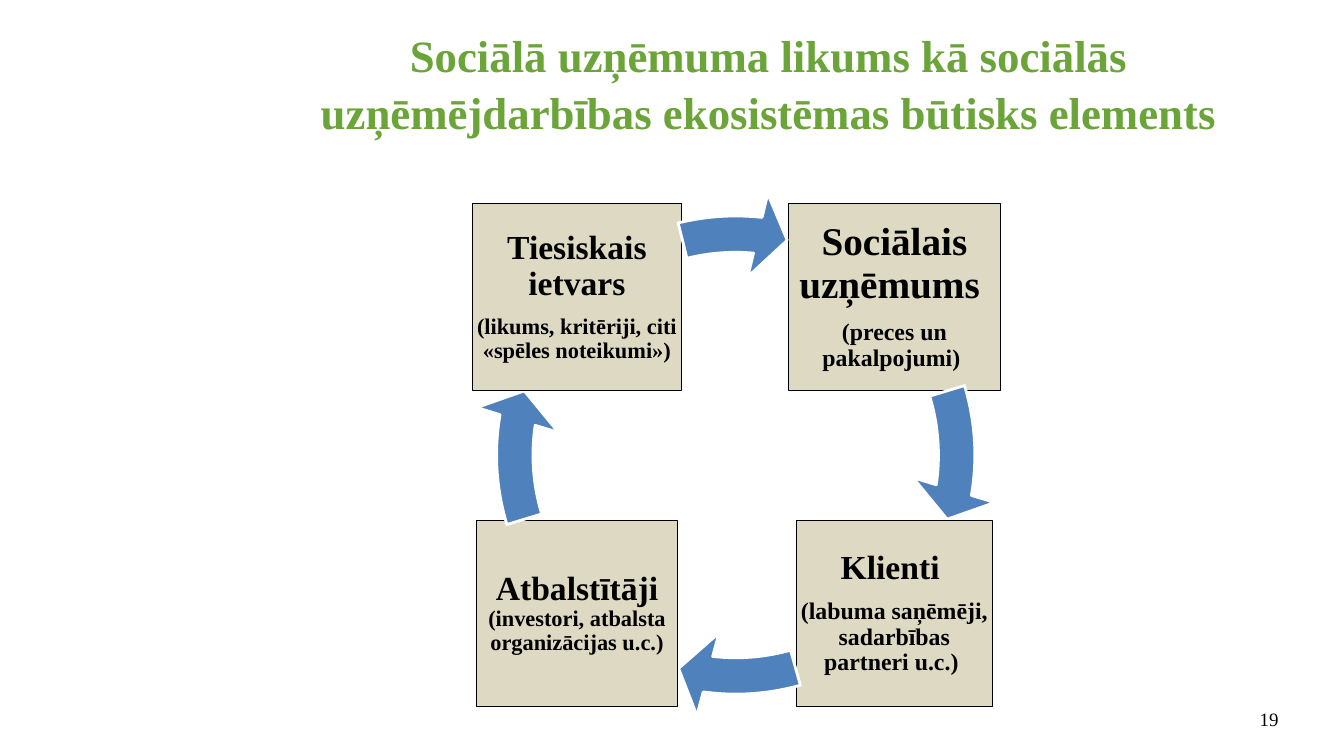
from dataclasses import dataclass

from pptx import Presentation
from pptx.dml.color import RGBColor
from pptx.enum.shapes import MSO_SHAPE
from pptx.enum.text import MSO_ANCHOR, PP_ALIGN
from pptx.util import Inches, Pt

RECTANGLE, CIRCULAR_ARROW = MSO_SHAPE.RECTANGLE, MSO_SHAPE.CIRCULAR_ARROW
TOP, MIDDLE = MSO_ANCHOR.TOP, MSO_ANCHOR.MIDDLE
CENTER, RIGHT = PP_ALIGN.CENTER, PP_ALIGN.RIGHT


@dataclass(frozen=True)
class Theme:
    font: str = "Times New Roman"
    ink: str = "000000"
    title: str = "6BA439"
    box: str = "DDD9C3"
    arrow: str = "4F81BD"
    arrow_edge: str = "FFFFFF"
    title_size: float = 32
    lead_size: float = 28
    head_size: float = 24
    detail_size: float = 17
    small_size: float = 16
    number_size: float = 13.5


class SlideBuilder:
    """Places elements on a grid of 100 columns by 100 rows."""

    def __init__(self, deck, theme):
        self.theme = theme
        self.page = deck.slides.add_slide(deck.slide_layouts[6])
        self.column = deck.slide_width / 100
        self.row = deck.slide_height / 100

    def area(self, left, top, width, height):
        return (round(left * self.column), round(top * self.row),
                round(width * self.column), round(height * self.row))

    def centered(self, x, y, width, height):
        return self.area(x - width / 2, y - height / 2, width, height)

    def fill_text(self, frame, paragraphs, color, anchor, inset, **layout):
        """Each paragraph is a list of (text, size, bold) spans."""
        sides = {f"margin_{side}": Inches(inset[side in ("top", "bottom")])
                 for side in ("left", "right", "top", "bottom")}
        for name, value in {"word_wrap": True, "vertical_anchor": anchor, **sides}.items():
            setattr(frame, name, value)
        for index, spans in enumerate(paragraphs):
            para = frame.add_paragraph() if index else frame.paragraphs[0]
            for name, value in layout.items():
                setattr(para, name, value)
            for text, size, bold in spans:
                span = para.add_run()
                span.text = text
                span.font.color.rgb = RGBColor.from_string(color)
                for name, value in {"name": self.theme.font, "size": Pt(size), "bold": bold}.items():
                    setattr(span.font, name, value)

    def label(self, area, text, size, color, bold, **layout):
        box = self.page.shapes.add_textbox(*self.area(*area))
        self.fill_text(box.text_frame, [[(text, size, bold)]], color, TOP, (0.1, 0.05), **layout)

    def shape(self, kind, area, fill, edge, edge_width):
        shape = self.page.shapes.add_shape(kind, *area)
        shape.shadow.inherit = False
        shape.fill.solid()
        shape.fill.fore_color.rgb = RGBColor.from_string(fill)
        shape.line.color.rgb = RGBColor.from_string(edge)
        shape.line.width = Pt(edge_width)
        return shape

    def box(self, x, y, width, height, paragraphs):
        theme = self.theme
        box = self.shape(RECTANGLE, self.centered(x, y, width, height), theme.box, theme.ink, 0.75)
        spans = [[(text, size, True) for text, size in para] for para in paragraphs]
        gap = Pt(round(0.35 * paragraphs[0][0][1], 1))
        self.fill_text(box.text_frame, spans, theme.ink, MIDDLE, (0.03, 0.03),
                       alignment=CENTER, line_spacing=0.9, space_after=gap)

    def ring_arrow(self, x, y, width, height, start, end):
        """Arrow along a ring, from start to end in clockwise degrees."""
        theme = self.theme
        arrow = self.shape(CIRCULAR_ARROW, self.centered(x, y, width, height),
                           theme.arrow, theme.arrow_edge, 2)
        per_degree = 0.6
        values = (0.069, 7.76 * per_degree, end * per_degree, start * per_degree, 0.081)
        for index, value in enumerate(values):
            arrow.adjustments[index] = value


def main():
    theme = Theme()
    deck = Presentation()
    deck.slide_width, deck.slide_height = Inches(13.33), Inches(7.5)
    slide = SlideBuilder(deck, theme)

    # Title
    slide.label((19.58, 2.67, 75.24, 18.4),
                "Sociālā uzņēmuma likums kā sociālās uzņēmējdarbības ekosistēmas būtisks elements",
                theme.title_size, theme.title, True, alignment=CENTER, line_spacing=1.05)

    # Cycle: side of the centre, box width, text, then the arrow's start and end
    center_x, center_y = 54.74, 60.2
    offset_x, offset_y = 11.81, 20.93
    lead, head, detail, small = (theme.lead_size, theme.head_size,
                                 theme.detail_size, theme.small_size)
    steps = [
        (1, -1, 15.83, [[("Sociālais uzņēmums ", lead)],
                        [("(preces un pakalpojumi) ", detail)]], 343.11, 9.13),
        (1, 1, 14.55, [[("Klienti ", head)],
                       [("(labuma saņēmēji, sadarbības partneri u.c.) ", detail)]], 74.31, 97.22),
        (-1, 1, 14.93, [[("Atbalstītāji ", head),
                         ("(investori, atbalsta organizācijas u.c.)", small)]], 163.11, 189.13),
        (-1, -1, 15.53, [[("Tiesiskais ietvars", head)],
                         [("(likums, kritēriji, citi «spēles noteikumi»)", small)]], 256.07, 275.73),
    ]
    for side_x, side_y, width, paragraphs, start, end in steps:
        slide.box(center_x + side_x * offset_x, center_y + side_y * offset_y,
                  width, 24.67, paragraphs)
        slide.ring_arrow(center_x, center_y, 39.23, 69.73, start, end)

    # Page number
    slide.label((78.39, 92.93, 17.48, 5.33), "19", theme.number_size, theme.ink, False,
                alignment=RIGHT)

    deck.save("out.pptx")


if __name__ == "__main__":
    main()
